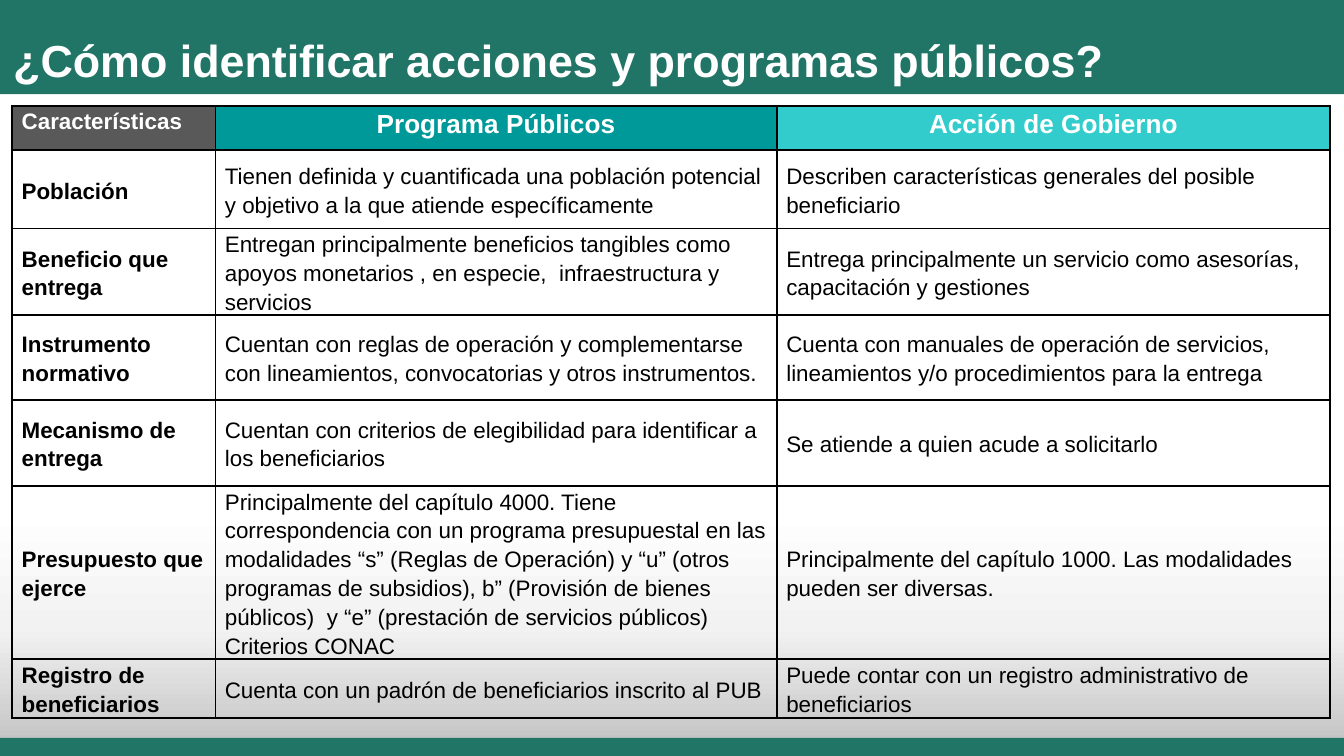
from copy import deepcopy

from lxml.etree import SubElement
from pptx import Presentation
from pptx.dml.color import RGBColor
from pptx.enum.shapes import MSO_SHAPE as Preset
from pptx.enum.text import MSO_ANCHOR as Anchor, PP_ALIGN as Align
from pptx.oxml.ns import qn
from pptx.util import Cm, Pt

GREEN, WHITE, BLACK = "217567", "FFFFFF", "000000"


def color(value):
    return RGBColor.from_string(value)


def add_text(paragraph, text, size, hue, bold):
    run = paragraph.add_run()
    run.text = text
    run.font.name = "Arial"
    run.font.size = Pt(size)
    run.font.bold = bold
    run.font.color.rgb = color(hue)


prs = Presentation()
prs.slide_width, prs.slide_height = Cm(25.4), Cm(14.29)
slide = prs.slides.add_slide(prs.slide_layouts[6])
shapes = slide.shapes

# Grey fade on the lower part, then the green bands
bands = []
for left, top, width, height in [
    (0, 4.94, 25.4, 9.35),
    (0, 0, 25.4, 1.78),
    (-0.1, 13.95, 25.6, 0.36),
]:
    band = shapes.add_shape(Preset.RECTANGLE, Cm(left), Cm(top), Cm(width), Cm(height))
    band.shadow.inherit = False
    band.line.fill.background()
    bands.append(band)

fade, *green_bands = bands
for band in green_bands:
    band.fill.solid()
    band.fill.fore_color.rgb = color(GREEN)

fade.fill.gradient()
fade.fill.gradient_angle = 270
first_stop = fade.fill.gradient_stops[0]._gs
first_stop.addnext(deepcopy(first_stop))
stops = [(0.5, WHITE), (0.74, "F2F2F2"), (1, "BFBFBF")]
for stop, (position, hue) in zip(fade.fill.gradient_stops, stops):
    stop.position = position
    stop.color.rgb = color(hue)

# Comparison table
header = ["Características", "Programa Públicos", "Acción de Gobierno"]
header_fills = ["595959", "009999", "33CCCC"]
rows = [
    header,
    ["Población",
     "Tienen definida y cuantificada una población potencial y objetivo a la que "
     "atiende específicamente",
     "Describen características generales del posible beneficiario"],
    ["Beneficio que entrega",
     "Entregan principalmente beneficios tangibles como apoyos monetarios , en "
     "especie,  infraestructura y servicios",
     "Entrega principalmente un servicio como asesorías, capacitación y gestiones"],
    ["Instrumento normativo",
     "Cuentan con reglas de operación y complementarse con lineamientos, "
     "convocatorias y otros instrumentos.",
     "Cuenta con manuales de operación de servicios, lineamientos y/o "
     "procedimientos para la entrega"],
    ["Mecanismo de entrega",
     "Cuentan con criterios de elegibilidad para identificar a los beneficiarios",
     "Se atiende a quien acude a solicitarlo"],
    ["Presupuesto que ejerce",
     "Principalmente del capítulo 4000. Tiene correspondencia con un programa "
     "presupuestal en las modalidades “s” (Reglas de Operación) y “u” (otros "
     "programas de subsidios), b” (Provisión de bienes públicos)  y “e” "
     "(prestación de servicios públicos) Criterios CONAC",
     "Principalmente del capítulo 1000. Las modalidades pueden ser diversas."],
    ["Registro de beneficiarios",
     "Cuenta con un padrón de beneficiarios inscrito al PUB",
     "Puede contar con un registro administrativo de beneficiarios"],
]
col_widths = [3.84, 10.61, 10.46]
row_heights = [0.84, 1.48, 1.63, 1.6, 1.63, 3.27, 1.12]

comparison = shapes.add_table(
    len(rows), len(header), Cm(0.23), Cm(2),
    Cm(sum(col_widths)), Cm(sum(row_heights)),
).table
comparison.first_row = comparison.horz_banding = False
for column, width in zip(comparison.columns, col_widths):
    column.width = Cm(width)
for row, height in zip(comparison.rows, row_heights):
    row.height = Cm(height)

for r, texts in enumerate(rows):
    for c, text in enumerate(texts):
        cell = comparison.cell(r, c)
        cell.margin_left = cell.margin_right = Cm(0.18)
        cell.margin_top = cell.margin_bottom = 0
        paragraph = cell.text_frame.paragraphs[0]
        paragraph.line_spacing = 1.15

        # Black border on every side, ahead of the fill
        for side in ("a:lnL", "a:lnR", "a:lnT", "a:lnB"):
            border = SubElement(cell._tc.get_or_add_tcPr(), qn(side), w=str(Pt(1)))
            paint = SubElement(border, qn("a:solidFill"))
            SubElement(paint, qn("a:srgbClr"), val=BLACK)

        if r == 0:
            cell.vertical_anchor = Anchor.TOP
            cell.fill.solid()
            cell.fill.fore_color.rgb = color(header_fills[c])
            if c > 0:
                paragraph.alignment = Align.CENTER
            add_text(paragraph, text, 14 if c > 0 else 12, WHITE, True)
        else:
            cell.vertical_anchor = Anchor.MIDDLE
            cell.fill.background()
            add_text(paragraph, text, 12, BLACK, c == 0)

# Title
title = shapes.add_textbox(0, Cm(0.61), Cm(23.11), Cm(1.04)).text_frame
title.word_wrap = True
title.vertical_anchor = Anchor.MIDDLE
add_text(title.paragraphs[0], "¿Cómo identificar acciones y programas públicos?",
         24, WHITE, True)

prs.save("out.pptx")
